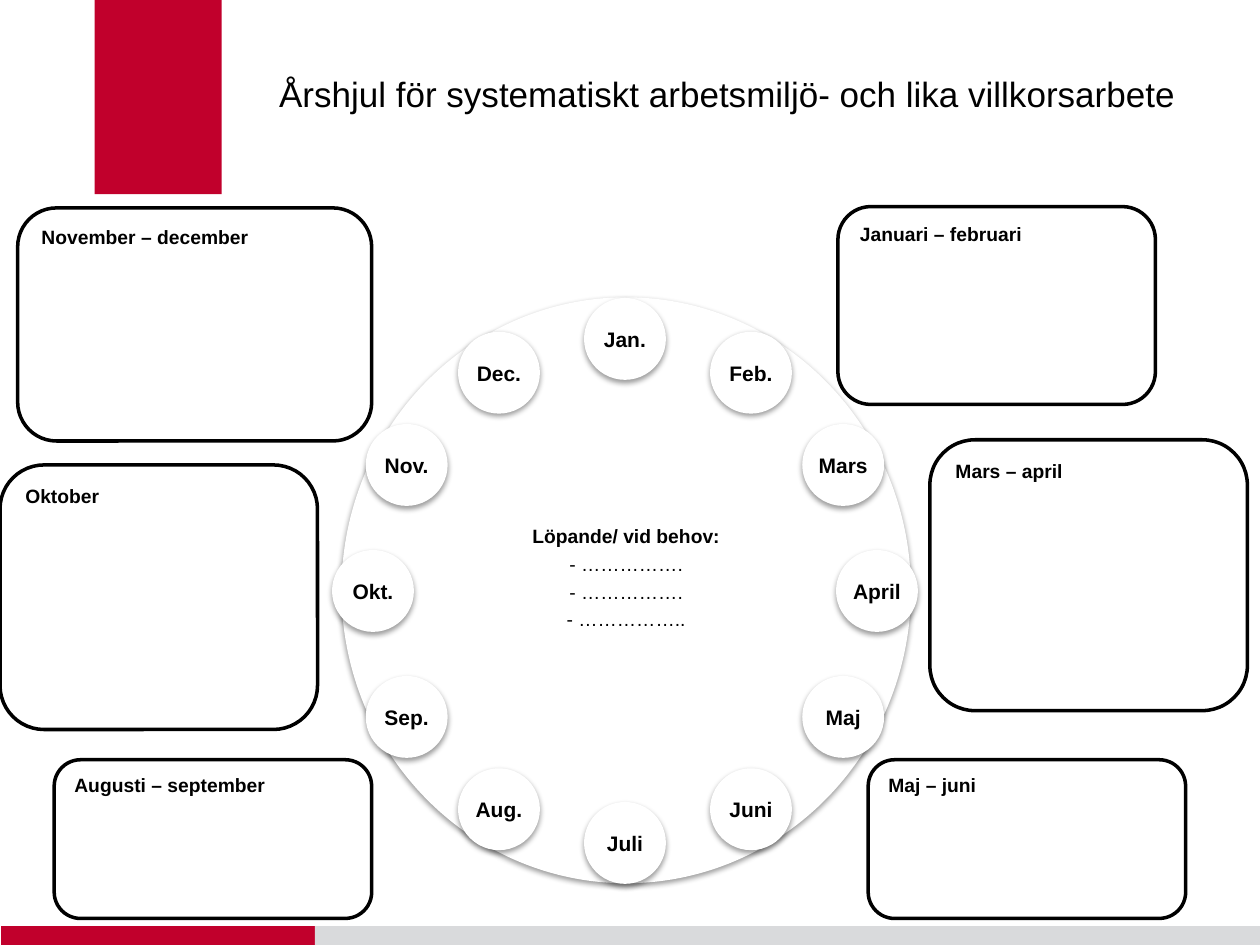
"""Build a yearly wheel slide with twelve months and six period boxes."""
from dataclasses import dataclass
from math import cos, radians, sin

from lxml import etree
from pptx import Presentation
from pptx import util as u
from pptx.dml.color import RGBColor
from pptx.enum import shapes, text
from pptx.oxml.ns import qn

HUES = {"red": "C1002C", "grey": "D9DADC", "white": "FFFFFF", "black": "000000"}
KIND = shapes.MSO_SHAPE
MID = text.PP_ALIGN.CENTER


@dataclass
class Box:
    """Hold a place and size in inches."""
    x: float
    y: float
    w: float
    h: float


@dataclass
class Card:
    """Hold a period and its box."""
    name: str
    box: Box


BANDS = [
    (Box(0.75, -0.01, 1.01, 1.55), "red"),
    (Box(0.01, 7.35, 2.5, 0.17), "red"),
    (Box(2.5, 7.35, 7.5, 0.17), "grey"),
]
CARDS = [
    Card("Augusti – september", Box(0.43, 6.03, 2.52, 1.26)),
    Card("Oktober", Box(0, 3.69, 2.52, 2.1)),
    Card("November – december", Box(0.14, 1.65, 2.81, 1.85)),
    Card("Maj – juni", Box(6.89, 6.03, 2.52, 1.26)),
    Card("Mars – april", Box(7.38, 3.49, 2.52, 2.15)),
    Card("Januari – februari", Box(6.65, 1.64, 2.52, 1.57)),
]
MONTHS = ["Jan.", "Feb.", "Mars", "April", "Maj", "Juni",
          "Juli", "Aug.", "Sep.", "Okt.", "Nov.", "Dec."]
NOTES = ["- …………….", "- …………….", "- …………….."]
HUB = Box(2.71, 2.36, 4.52, 4.65)
MID_X, MID_Y, REACH, DISC = 4.96, 4.69, 2.0, 0.65


def tint(name: str) -> RGBColor:
    """Return a named colour."""
    return RGBColor.from_string(HUES[name])


def draw(slide, kind, box: Box, fill: str):
    """Add a filled shape without line or shadow."""
    shape = slide.shapes.add_shape(kind, *map(u.Inches, (box.x, box.y, box.w, box.h)))
    shape.shadow.inherit = False
    shape.fill.solid()
    shape.fill.fore_color.rgb = tint(fill)
    shape.line.fill.background()
    return shape


def shade(shape) -> None:
    """Give a shape a soft shadow below it."""
    fx = shape._element.spPr.find(qn("a:effectLst"))
    glow = etree.SubElement(fx, qn("a:outerShdw"), blurRad="40000", dist="20000",
                            dir="5400000", rotWithShape="0")
    hue = etree.SubElement(glow, qn("a:srgbClr"), val=HUES["black"])
    etree.SubElement(hue, qn("a:alpha"), val="38000")


def inset(frame, side: float, base: float) -> None:
    """Set the margins of a text frame."""
    frame.margin_left = frame.margin_right = frame.margin_top = u.Inches(side)
    frame.margin_bottom = u.Inches(base)


def write(par, words: str, size: float, bold: bool, align) -> None:
    """Add one run to a paragraph."""
    par.alignment = align
    run = par.add_run()
    run.text = words
    run.font.name = "Arial"
    run.font.size = u.Pt(size)
    run.font.bold = bold
    run.font.color.rgb = tint("black")


def head(slide) -> None:
    """Fill the title placeholder."""
    title = slide.shapes.title
    title.left, title.top = u.Inches(1.69), u.Inches(0.12)
    title.width, title.height = u.Inches(7.64), u.Inches(1.25)
    frame = title.text_frame
    inset(frame, 0, 0)
    frame.vertical_anchor = text.MSO_ANCHOR.MIDDLE
    write(frame.paragraphs[0],
          "Årshjul för systematiskt arbetsmiljö- och lika villkorsarbete",
          20, False, text.PP_ALIGN.RIGHT)


def wheel(slide) -> None:
    """Draw the hub and its ring of months."""
    hub = draw(slide, KIND.OVAL, HUB, "white")
    shade(hub)
    frame = hub.text_frame
    inset(frame, 0.02, 0.2)
    for i, line in enumerate(["Löpande/ vid behov:", *NOTES]):
        par = frame.add_paragraph() if i else frame.paragraphs[0]
        par.line_spacing = 0.9
        par.space_after = u.Pt(4)
        write(par, line, 11, i == 0, MID)
    for i, name in enumerate(MONTHS):
        turn = radians(360 / len(MONTHS) * i)
        x = MID_X + REACH * sin(turn) - DISC / 2
        y = MID_Y - REACH * cos(turn) - DISC / 2
        disc = draw(slide, KIND.OVAL, Box(x, y, DISC, DISC), "white")
        shade(disc)
        inset(disc.text_frame, 0.02, 0.02)
        disc.text_frame.word_wrap = False
        write(disc.text_frame.paragraphs[0], name, 12, True, MID)


def place(slide, card: Card) -> None:
    """Draw one period box."""
    shape = draw(slide, KIND.ROUNDED_RECTANGLE, card.box, "white")
    shape.line.color.rgb = tint("black")
    shape.line.width = u.Pt(2)
    shape.text_frame.vertical_anchor = text.MSO_ANCHOR.TOP
    write(shape.text_frame.paragraphs[0], card.name, 11, True, text.PP_ALIGN.LEFT)


def main() -> None:
    """Build and save the slide."""
    deck = Presentation()
    deck.slide_width, deck.slide_height = u.Inches(10), u.Inches(7.5)
    slide = deck.slides.add_slide(deck.slide_layouts[5])
    for box, fill in BANDS:
        draw(slide, KIND.RECTANGLE, box, fill)
    head(slide)
    wheel(slide)
    for card in CARDS:
        place(slide, card)
    deck.save("out.pptx")


if __name__ == "__main__":
    main()
